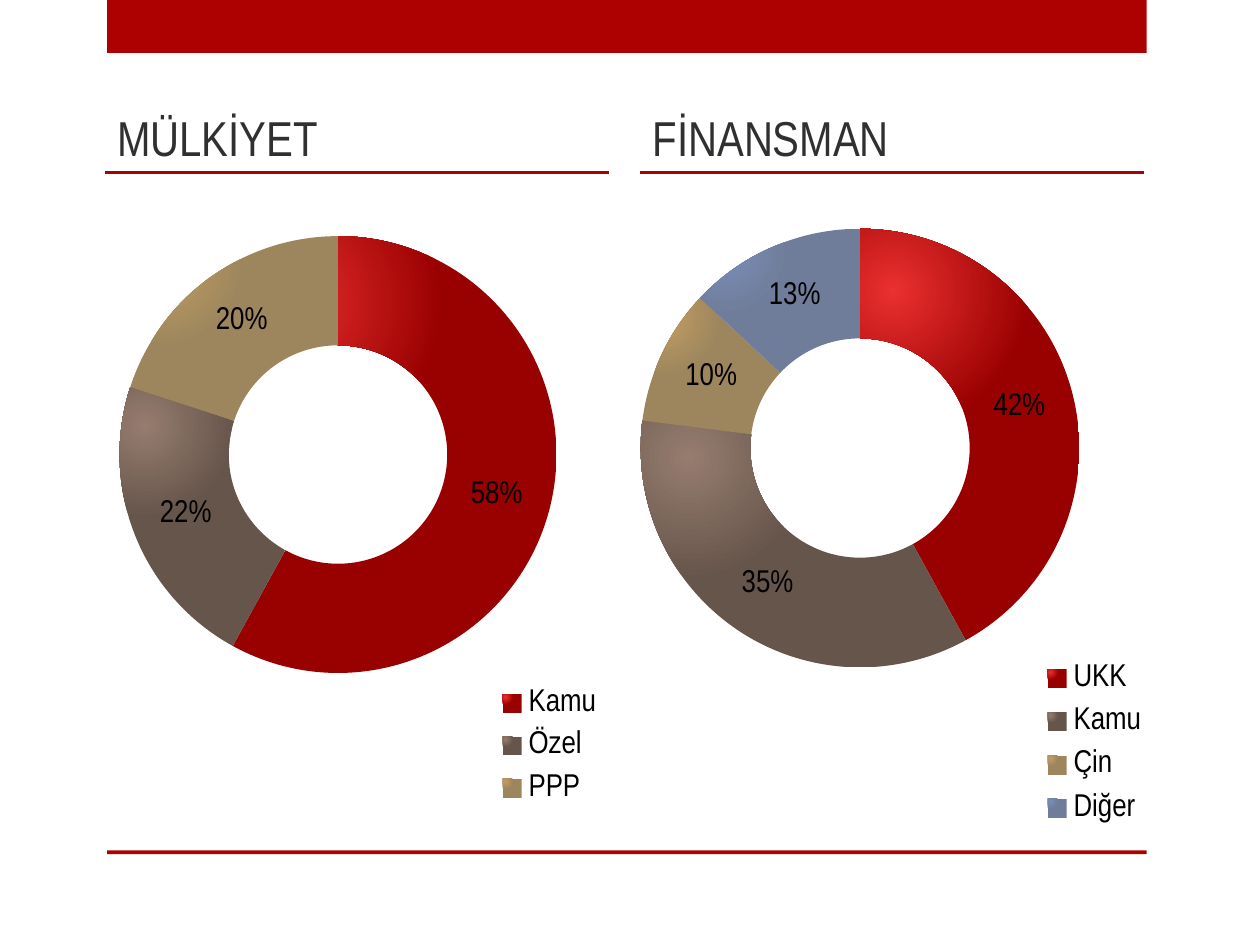
from lxml.etree import SubElement, Element
from pptx import Presentation
from pptx.chart.data import CategoryChartData
from pptx.dml.color import RGBColor
from pptx.enum.chart import XL_CHART_TYPE as Kind, XL_LEGEND_POSITION as Side
from pptx.enum.shapes import MSO_CONNECTOR as Link, MSO_SHAPE as Form
from pptx.enum.text import MSO_ANCHOR as Anchor, MSO_AUTO_SIZE as Fit
from pptx.oxml.ns import qn
from pptx.util import Inches, Pt

FONT = "Arial Narrow"
RED = RGBColor(0xAD, 0x01, 0x01)
GREY = RGBColor(0x30, 0x30, 0x30)
BLACK = RGBColor(0, 0, 0)
# Light and dark end of each slice's glow
TONES = [
    (RGBColor(0xEA, 0x30, 0x30), RGBColor(0x99, 0x00, 0x00)),
    (RGBColor(0x96, 0x7C, 0x6F), RGBColor(0x66, 0x55, 0x4B)),
    (RGBColor(0xC2, 0x9D, 0x62), RGBColor(0x9D, 0x86, 0x5E)),
    (RGBColor(0x7A, 0x8E, 0xB9), RGBColor(0x70, 0x7D, 0x9A)),
]

BARS = [(0, 0.42), (6.75, 0.03)]  # top, height
# Boxes in inches; plot and legend as shares of the chart
PANELS = [
    {"head": "MÜLKİYET", "slot": 1, "left": 0.83,
     "data": [("Kamu", 0.58), ("Özel", 0.22), ("PPP", 0.2)],
     "box": (0.57, 1.39, 4.26, 5.3),
     "plot": (0.089, 0.091, 0.814, 0.655),
     "legend": (0.78, 0.75, 0.22, 0.21)},
    {"head": "FİNANSMAN", "slot": 3, "left": 5.08,
     "data": [("UKK", 0.42), ("Kamu", 0.35), ("Çin", 0.1), ("Diğer", 0.13)],
     "box": (5.01, 1.45, 4.43, 5.3),
     "plot": (0.017, 0.069, 0.786, 0.657),
     "legend": (0.72, 0.7, 0.22, 0.28)},
]


def add_bar(slide, top, height):
    bar = slide.shapes.add_shape(
        Form.RECTANGLE, Inches(0.85), Inches(top), Inches(8.25), Inches(height))
    bar.shadow.inherit = False
    bar.fill.solid()
    bar.fill.fore_color.rgb = RED
    bar.line.fill.background()


def add_head(slide, panel):
    left = panel["left"]
    line = slide.shapes.add_connector(
        Link.STRAIGHT, Inches(left), Inches(1.37), Inches(left + 4), Inches(1.37))
    line.line.color.rgb = RED
    line.line.width = Pt(1.25)
    SubElement(line._element.spPr, qn("a:effectLst"))

    body = slide.placeholders[panel["slot"]]
    body.left, body.top = Inches(left), Inches(0.67)
    body.width, body.height = Inches(4), Inches(0.7)
    frame = body.text_frame
    frame.auto_size = Fit.NONE
    frame.vertical_anchor = Anchor.BOTTOM
    run = frame.paragraphs[0].add_run()
    run.text = panel["head"]
    run.font.name, run.font.size, run.font.bold = FONT, Pt(28), False
    run.font.color.rgb = GREY


def place(part, index, box, inner=False):
    """Give a chart part a fixed place within its chart."""
    for old in part.findall(qn("c:layout")):
        part.remove(old)
    layout = Element(qn("c:layout"))
    manual = SubElement(layout, qn("c:manualLayout"))
    rules = [("layoutTarget", "inner")] if inner else []
    rules += [("xMode", "edge"), ("yMode", "edge"), *zip("xywh", box)]
    for tag, val in rules:
        SubElement(manual, qn(f"c:{tag}")).set("val", str(val))
    part.insert(index, layout)


def make_round(root):
    """Turn the linear gradients into glows from the upper left."""
    for lin in list(root.iter(qn("a:lin"))):
        glow = Element(qn("a:path"), path="circle")
        SubElement(glow, qn("a:fillToRect"), l="15000", t="15000",
                   r="85000", b="85000")
        lin.getparent().replace(lin, glow)


def add_ring(slide, panel):
    names, shares = zip(*panel["data"])
    data = CategoryChartData(number_format="0%")
    data.categories = names
    data.add_series("Series 1", shares)
    chart = slide.shapes.add_chart(
        Kind.DOUGHNUT, *map(Inches, panel["box"]), data).chart
    chart.has_title = False
    chart.font.name, chart.font.size = FONT, Pt(18)
    chart.font.color.rgb = BLACK

    plot = chart.plots[0]
    plot.vary_by_categories = True
    plot.has_data_labels = True
    labels = plot.data_labels
    labels.show_value, labels.show_percentage = True, False
    labels.number_format, labels.number_format_is_linked = "0%", False
    for i, tones in enumerate(TONES[:len(names)]):
        form = plot.series[0].points[i].format
        form.line.fill.background()
        form.fill.gradient()
        for stop, tone, pos in zip(form.fill.gradient_stops, tones, (0, 0.6)):
            stop.color.rgb, stop.position = tone, pos

    chart.has_legend = True
    chart.legend.position = Side.RIGHT
    chart.legend.include_in_layout = False
    root = chart._chartSpace
    make_round(root)
    place(next(root.iter(qn("c:plotArea"))), 0, panel["plot"], inner=True)
    place(next(root.iter(qn("c:legend"))), 1, panel["legend"])


def main():
    deck = Presentation()
    deck.slide_width, deck.slide_height = Inches(10), Inches(7.5)
    slide = deck.slides.add_slide(deck.slide_layouts[4])
    used = [panel["slot"] for panel in PANELS]
    for hold in list(slide.placeholders):
        if hold.placeholder_format.idx not in used:
            hold._element.getparent().remove(hold._element)
    for top, height in BARS:
        add_bar(slide, top, height)
    for panel in PANELS:
        add_head(slide, panel)
        add_ring(slide, panel)
    deck.save("out.pptx")


if __name__ == "__main__":
    main()
